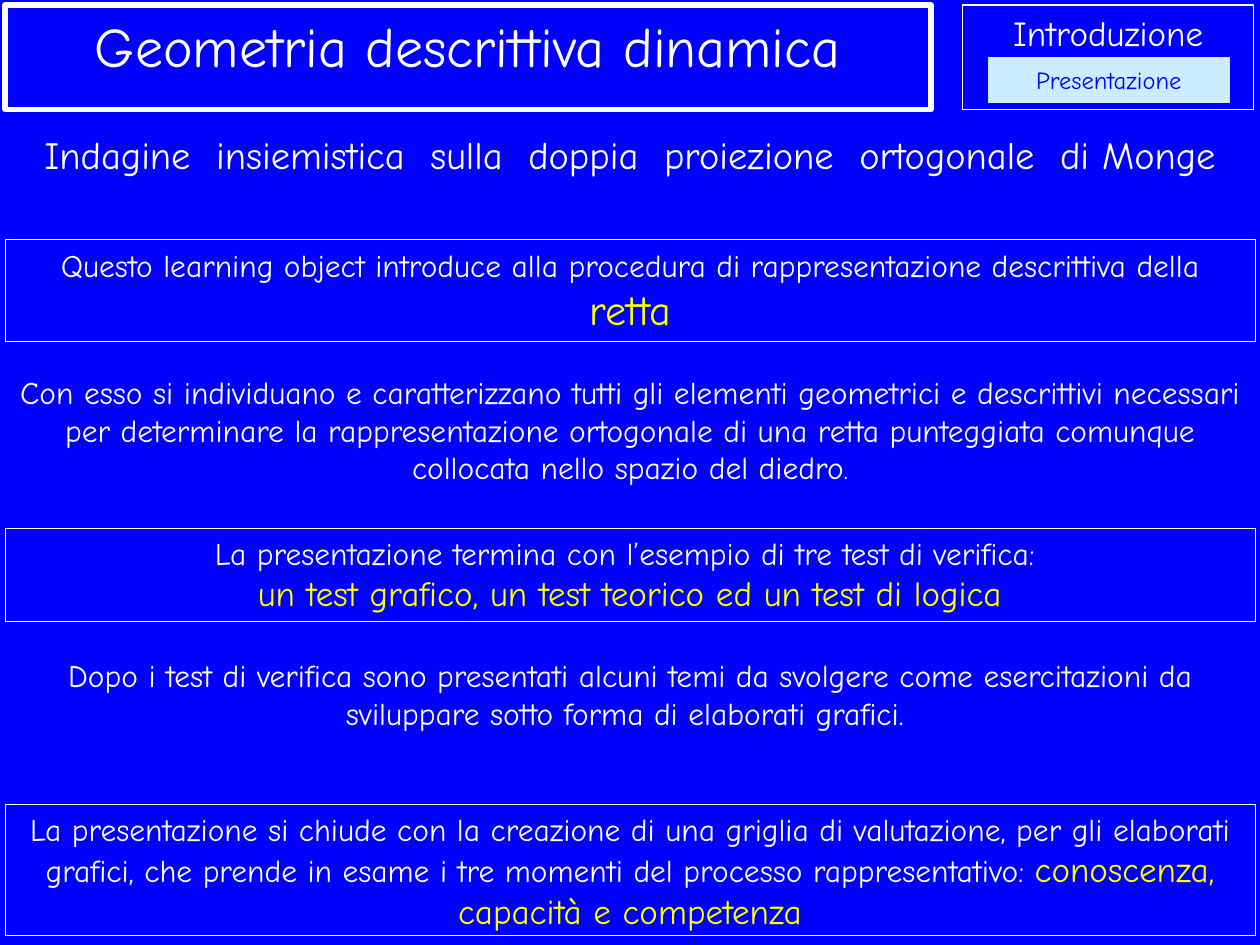
from dataclasses import dataclass

from pptx import Presentation
from pptx.dml.color import RGBColor
from pptx.enum.shapes import MSO_SHAPE
from pptx.enum.text import MSO_ANCHOR, PP_ALIGN
from pptx.util import Inches, Pt

RECTANGLE = MSO_SHAPE.RECTANGLE
BUTTON = MSO_SHAPE.ACTION_BUTTON_CUSTOM
TOP, MIDDLE = MSO_ANCHOR.TOP, MSO_ANCHOR.MIDDLE
CENTER = PP_ALIGN.CENTER

WIDTH, HEIGHT = 10, 7.5
MARGIN = 0.04
FULL_WIDTH = WIDTH - 2 * MARGIN
HEADER_HEIGHT = 0.83


@dataclass(frozen=True)
class Theme:
    """Colours, type sizes and line widths of the slide."""

    font: str = "Comic Neue"
    background: RGBColor = RGBColor(0x00, 0x00, 0xFF)
    text: RGBColor = RGBColor(0xFF, 0xFF, 0xFF)
    accent: RGBColor = RGBColor(0xFF, 0xFF, 0x00)
    button: RGBColor = RGBColor(0xCC, 0xEC, 0xFF)
    title: int = 32
    keyword: int = 24
    subtitle: int = 22
    emphasis: int = 20
    body: int = 18
    full_stop: int = 16
    label: int = 14
    thick: float = 3
    thin: float = 0.75
    hairline: float = 0.25


THEME = Theme()


def plain(text, size=THEME.body):
    """Describe a run in the text colour."""
    return text, size, THEME.text


def accent(text, size=THEME.emphasis):
    """Describe a run in the accent colour."""
    return text, size, THEME.accent


def write(shape, paragraphs, anchor=TOP):
    """Fill a shape with centred paragraphs, run by run."""
    frame = shape.text_frame
    frame.word_wrap = True
    frame.vertical_anchor = anchor
    for index, runs in enumerate(paragraphs):
        paragraph = frame.add_paragraph() if index else frame.paragraphs[0]
        paragraph.alignment = CENTER
        for text, size, color in runs:
            run = paragraph.add_run()
            run.text = text
            run.font.name = THEME.font
            run.font.size = Pt(size)
            run.font.color.rgb = color


def add_text(slide, box, *paragraphs):
    """Add an unframed text."""
    write(slide.shapes.add_textbox(*map(Inches, box)), paragraphs)


def add_frame(slide, box, line_width, *paragraphs):
    """Add a text inside an outlined rectangle."""
    shape = slide.shapes.add_shape(RECTANGLE, *map(Inches, box))
    shape.shadow.inherit = False
    shape.fill.background()
    shape.line.color.rgb = THEME.text
    shape.line.width = Pt(line_width)
    write(shape, paragraphs)


def add_button(slide, box, text):
    """Add a filled button with its label."""
    shape = slide.shapes.add_shape(BUTTON, *map(Inches, box))
    shape.shadow.inherit = False
    shape.fill.solid()
    shape.fill.fore_color.rgb = THEME.button
    shape.line.fill.background()
    write(shape, [[(text, THEME.label, THEME.background)]], MIDDLE)


def row(top, height):
    """Return the box of a row as wide as the slide's margins allow."""
    return MARGIN, top, FULL_WIDTH, height


def add_header(slide):
    """Add the course title, the section title and its button."""
    add_frame(slide, (7.64, MARGIN, 2.31, HEADER_HEIGHT), THEME.thin,
              [plain("Introduzione", THEME.emphasis)])
    add_frame(slide, (MARGIN, MARGIN, 7.35, HEADER_HEIGHT), THEME.thick,
              [plain("Geometria descrittiva dinamica", THEME.title)])
    add_button(slide, (7.84, 0.45, 1.92, 0.37), "Presentazione")
    add_text(slide, row(0.99, 0.47),
             [plain("Indagine  insiemistica  sulla  doppia  proiezione  ortogonale  di Monge",
                    THEME.subtitle)])


def add_body(slide):
    """Add the framed and unframed rows of the presentation."""
    add_frame(slide, row(1.9, 0.81), THEME.hairline,
              [plain("Questo learning object introduce alla procedura di "
                     "rappresentazione descrittiva della "),
               accent("retta", THEME.keyword)])
    add_text(slide, row(2.91, 1.01),
             [plain("Con esso si individuano e caratterizzano tutti gli elementi "
                    "geometrici e descrittivi necessari per determinare la "
                    "rappresentazione ortogonale di una retta punteggiata comunque "
                    "collocata nello spazio del diedro"),
              plain(".", THEME.full_stop)])
    add_frame(slide, row(4.19, 0.74), THEME.hairline,
              [plain("La presentazione termina con l’esempio di tre test di verifica: ")],
              [accent("un test grafico, un test teorico ed un test di logica")])
    add_text(slide, row(5.16, 0.71),
             [plain("Dopo i test di verifica sono presentati alcuni temi da svolgere "
                    "come esercitazioni da sviluppare sotto forma di elaborati grafici. ")])
    add_frame(slide, row(6.38, 1.04), THEME.hairline,
              [plain("La presentazione si chiude con la creazione di una griglia di "
                     "valutazione, per gli elaborati grafici, che prende in esame i tre "
                     "momenti del processo rappresentativo: "),
               accent("conoscenza, capacità e competenza")])


def main():
    """Build and save the presentation."""
    presentation = Presentation()
    presentation.slide_width = Inches(WIDTH)
    presentation.slide_height = Inches(HEIGHT)
    slide = presentation.slides.add_slide(presentation.slide_layouts[6])
    slide.background.fill.solid()
    slide.background.fill.fore_color.rgb = THEME.background
    add_header(slide)
    add_body(slide)
    presentation.save("out.pptx")


if __name__ == "__main__":
    main()
